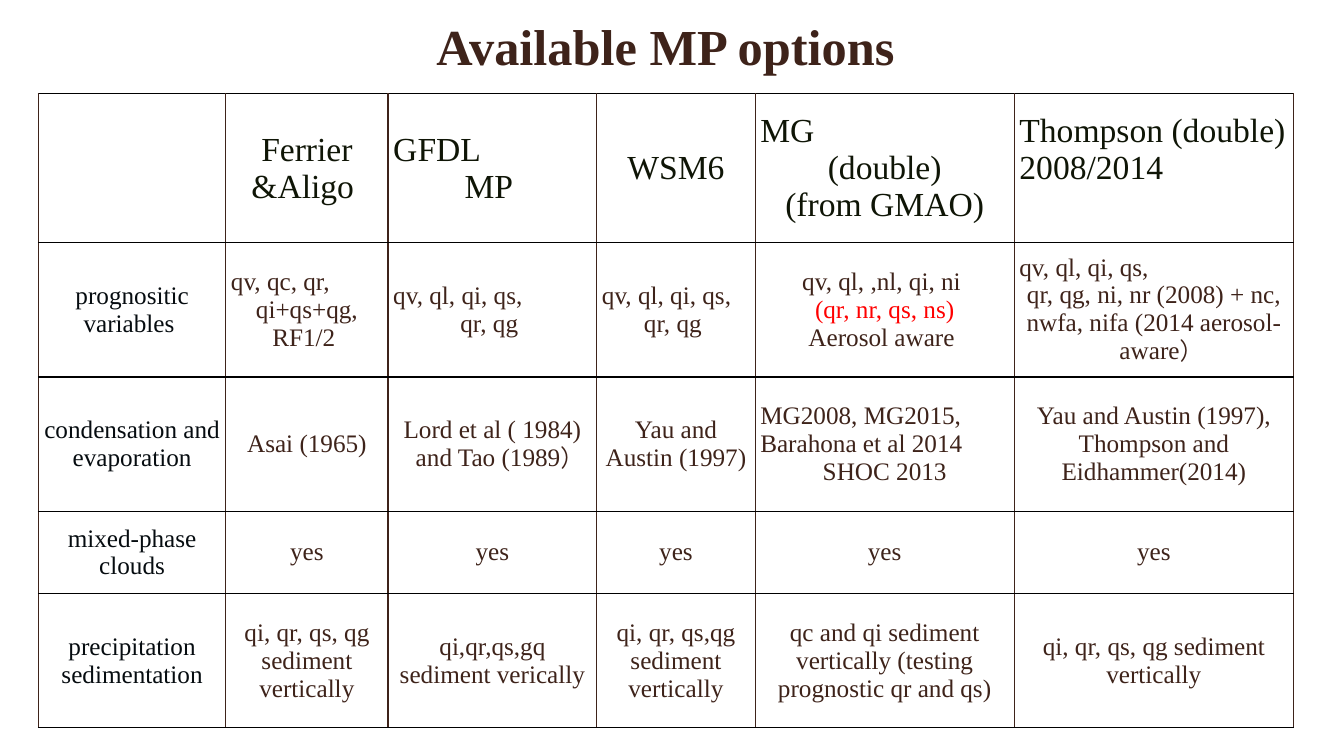
from dataclasses import dataclass

from lxml.etree import SubElement
from pptx import Presentation
from pptx.dml.color import RGBColor
from pptx.enum.text import MSO_ANCHOR, PP_ALIGN
from pptx.oxml.ns import qn
from pptx.util import Cm, Pt


@dataclass(frozen=True)
class Theme:
    font: str = "Times New Roman"
    bracket_font: str = "Comic Neue"
    brown: str = "3E231A"
    header: str = "0F1506"
    row_label: str = "060C10"
    red: str = "FF0000"
    rule: str = "000000"
    title_size: int = 36
    header_size: int = 24
    body_size: int = 18
    rule_width: int = 1


@dataclass(frozen=True)
class Line:
    """One paragraph of a cell; tail is a closing bracket in its own font."""
    text: str
    align: PP_ALIGN = PP_ALIGN.CENTER
    color: str = ""
    tail: str = ""


THEME = Theme()


def left(text):
    return Line(text, align=PP_ALIGN.LEFT)


COLUMN_WIDTHS = [4.72, 4.09, 5.26, 3.99, 6.53, 7.04]
ROW_HEIGHTS = [3.76, 3.38, 3.38, 2.08, 3.38]
OPTIONS = [
    [
        [],
        [Line("Ferrier &Aligo ")],
        [left("GFDL"), Line("MP ")],
        [Line("WSM6")],
        [left("MG "), Line("(double)"), Line("(from GMAO)")],
        [left("Thompson (double) 2008/2014")],
    ],
    [
        [Line("prognositic variables ")],
        [left("qv, qc, qr, "), Line("qi+qs+qg, RF1/2 ")],
        [left("qv, ql, qi, qs, "), Line("qr, qg ")],
        [left("qv, ql, qi, qs, "), Line("qr, qg ")],
        [Line("qv, ql, ,nl, qi, ni "), Line("(qr, nr, qs, ns)", color=THEME.red),
         Line("Aerosol aware ")],
        [left("qv, ql, qi, qs, "),
         Line("qr, qg, ni, nr (2008) + nc, nwfa, nifa (2014 aerosol-aware", tail=")")],
    ],
    [
        [Line("condensation and evaporation")],
        [Line("Asai (1965)")],
        [Line("Lord et al ( 1984) and Tao (1989", tail=")")],
        [Line("Yau and Austin (1997)")],
        [left("MG2008, MG2015, Barahona et al 2014"), Line("SHOC 2013")],
        [Line("Yau and Austin (1997), Thompson and Eidhammer(2014)")],
    ],
    [[Line("mixed-phase clouds")]] + [[Line("yes")]] * 5,
    [
        [Line("precipitation sedimentation")],
        [Line("qi, qr, qs, qg sediment vertically")],
        [Line("qi,qr,qs,gq sediment verically")],
        [Line("qi, qr, qs,qg sediment vertically")],
        [Line("qc and qi sediment vertically (testing prognostic qr and qs)")],
        [Line("qi, qr, qs, qg sediment vertically")],
    ],
]


def style_run(run, size, color, font=THEME.font, bold=False):
    run.font.name = font
    run.font.size = Pt(size)
    run.font.bold = bold
    run.font.color.rgb = RGBColor.from_string(color)


def write_lines(frame, lines, size, color):
    for index, line in enumerate(lines):
        paragraph = frame.paragraphs[0] if index == 0 else frame.add_paragraph()
        paragraph.text = line.text
        paragraph.alignment = line.align
        style_run(paragraph.runs[0], size, line.color or color)
        if line.tail:
            bracket = paragraph.add_run()
            bracket.text = line.tail
            style_run(bracket, size, line.color or color, THEME.bracket_font)


def rule_cell(cell):
    """Draw brown vertical and black horizontal borders."""
    properties = cell._tc.get_or_add_tcPr()
    sides = {"a:lnL": THEME.brown, "a:lnR": THEME.brown,
             "a:lnT": THEME.rule, "a:lnB": THEME.rule}
    for position, (side, color) in enumerate(sides.items()):
        border = SubElement(properties, qn(side), w=str(Pt(THEME.rule_width)))
        fill = SubElement(border, qn("a:solidFill"))
        SubElement(fill, qn("a:srgbClr"), val=color)
        properties.insert(position, border)


def add_title(slide, x, y, width, height):
    frame = slide.shapes.add_textbox(Cm(x), Cm(y), Cm(width), Cm(height)).text_frame
    frame.word_wrap = True
    frame.vertical_anchor = MSO_ANCHOR.MIDDLE
    heading = frame.paragraphs[0]
    heading.text = "Available MP options"
    heading.alignment = PP_ALIGN.CENTER
    style_run(heading.runs[0], THEME.title_size, THEME.brown, bold=True)


def add_options_table(slide, x, y):
    table = slide.shapes.add_table(
        len(ROW_HEIGHTS), len(COLUMN_WIDTHS), Cm(x), Cm(y),
        Cm(sum(COLUMN_WIDTHS)), Cm(sum(ROW_HEIGHTS))).table
    table.first_row = table.horz_banding = False
    for column, width in zip(table.columns, COLUMN_WIDTHS):
        column.width = Cm(width)
    for row, height in zip(table.rows, ROW_HEIGHTS):
        row.height = Cm(height)

    for r, row in enumerate(OPTIONS):
        for c, lines in enumerate(row):
            cell = table.cell(r, c)
            cell.fill.background()
            cell.vertical_anchor = MSO_ANCHOR.MIDDLE
            cell.margin_left = cell.margin_right = Cm(0.13)
            cell.margin_top = cell.margin_bottom = Cm(0.1)
            rule_cell(cell)
            size = THEME.header_size if r == 0 else THEME.body_size
            color = (THEME.header if r == 0 else
                     THEME.row_label if c == 0 else THEME.brown)
            write_lines(cell.text_frame, lines, size, color)
    # The Thompson heading sits half a line higher than its neighbours
    table.cell(0, len(COLUMN_WIDTHS) - 1).margin_bottom = Cm(1.04)


def main():
    deck = Presentation()
    deck.slide_width, deck.slide_height = Cm(33.87), Cm(19.05)
    slide = deck.slides.add_slide(deck.slide_layouts[6])
    add_title(slide, 1.65, 0, 30.25, 2.29)
    add_options_table(slide, 0.97, 2.36)
    deck.save("out.pptx")


if __name__ == "__main__":
    main()
